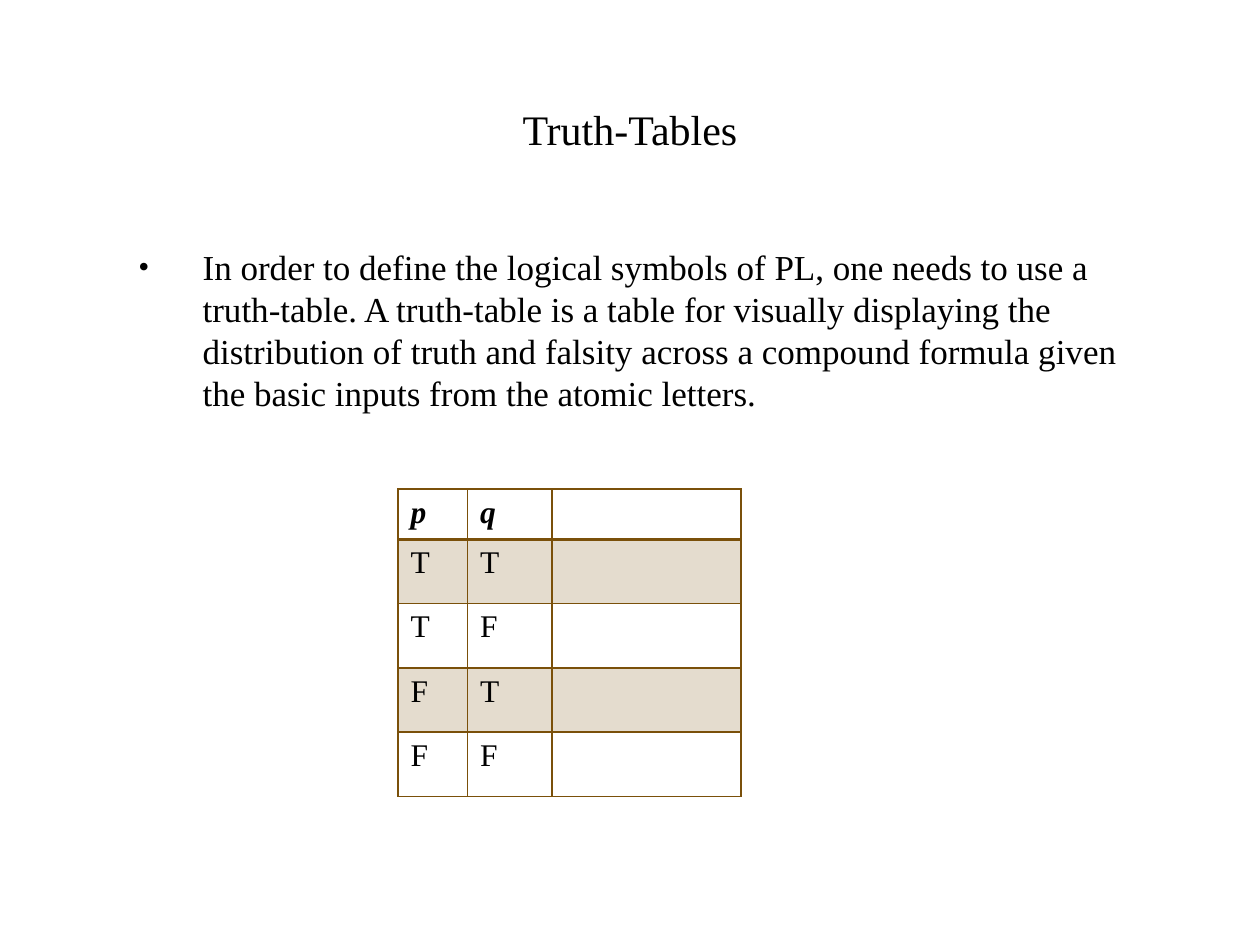
from lxml.etree import SubElement as Sub
from pptx import Presentation
from pptx.dml.color import RGBColor
from pptx.enum.text import MSO_ANCHOR as Anchor, PP_ALIGN as Align
from pptx.oxml import parse_xml
from pptx.oxml.ns import nsdecls, qn
from pptx.util import Inches, Pt

BROWN = "7A500A"
WIDE, HIGH = 10, 7.5
ROWS = ["pq", "TT", "TF", "FT", "FF"]
TEXT = ("In order to define the logical symbols of PL, one needs to use a "
        "truth-table. A truth-table is a table for visually displaying the "
        "distribution of truth and falsity across a compound formula given "
        "the basic inputs from the atomic letters.")


def color(code):
    return RGBColor.from_string(code)


class Deck:
    """Holds the style and the current slide; places are shares of its size."""
    face, ink = "Times New Roman", "000000"

    def __init__(self):
        self.prs = Presentation()
        self.prs.slide_width, self.prs.slide_height = Inches(WIDE), Inches(HIGH)
        self.slide = self.prs.slides.add_slide(self.prs.slide_layouts[5])

    def area(self, x, y, w, h):
        return [Inches(n) for n in (x * WIDE, y * HIGH, w * WIDE, h * HIGH)]

    def style(self, para, size, **look):
        for key, val in dict(name=self.face, size=Pt(size), **look).items():
            setattr(para.font, key, val)
        para.font.color.rgb = color(self.ink)

    def title(self, text, place, size):
        box = self.slide.shapes.title
        names = ("left", "top", "width", "height")
        for key, val in zip(names, self.area(*place)):
            setattr(box, key, val)
        frame = box.text_frame
        frame.text, frame.vertical_anchor = text, Anchor.MIDDLE
        para = frame.paragraphs[0]
        para.alignment = Align.CENTER
        self.style(para, size)

    def bullet(self, text, place, size, lead, indent):
        frame = self.slide.shapes.add_textbox(*self.area(*place)).text_frame
        frame.word_wrap = True
        para = frame.paragraphs[0]
        para.text, para.line_spacing = text, Pt(lead)
        props = para._p.get_or_add_pPr()
        props.set("marL", str(Inches(indent)))
        props.set("indent", str(-Inches(indent)))
        Sub(props, qn("a:buSzPct"), val="90000")
        Sub(props, qn("a:buFont"), typeface=self.face)
        Sub(props, qn("a:buChar"), char="•")
        self.style(para, size)

    def border(self, cell, **widths):
        props = cell._tc.get_or_add_tcPr()
        for spot, (side, width) in enumerate(widths.items()):
            props.insert(spot, parse_xml(
                f'<a:ln{side} {nsdecls("a")} w="{Pt(width)}"><a:solidFill>'
                f'<a:srgbClr val="{BROWN}"/></a:solidFill></a:ln{side}>'))

    def shade(self, cell, code, share):
        cell.fill.solid()
        cell.fill.fore_color.rgb = color(code)
        tone = cell._tc.tcPr.find(".//" + qn("a:srgbClr"))
        Sub(tone, qn("a:alpha"), val=str(share * 1000))

    def table(self, rows, place, cols, heights, size):
        grid = self.slide.shapes.add_table(
            len(rows), len(cols), *self.area(*place)).table
        grid.first_row = grid.horz_banding = False
        for col, width in zip(grid.columns, cols):
            col.width = Inches(width)
        for r, (row, height) in enumerate(zip(grid.rows, heights)):
            row.height = Inches(height)
            for c, cell in enumerate(row.cells):
                cell.text = rows[r][c:c + 1]
                self.style(cell.text_frame.paragraphs[0], size,
                           bold=r == 0, italic=r == 0)
                if r % 2:
                    self.shade(cell, BROWN, 20)
                else:
                    cell.fill.background()
                self.border(cell, L=1, R=1, T=2 if r == 1 else 1,
                            B=2 if r == 0 else 1)


def main():
    deck = Deck()
    deck.title("Truth-Tables", (0.1, 0.55 / HIGH, 0.8, 0.95 / HIGH), 24)
    deck.bullet(TEXT, (0.1, 1.9 / HIGH, 0.8, 1.6 / HIGH), 20, 24, 0.51)
    deck.table(ROWS, (0.316, 3.88 / HIGH, 0.272, 2.32 / HIGH),
               [0.55, 0.67, 1.5], [0.28] + [0.51] * 4, 18)
    deck.prs.save("out.pptx")


if __name__ == "__main__":
    main()
